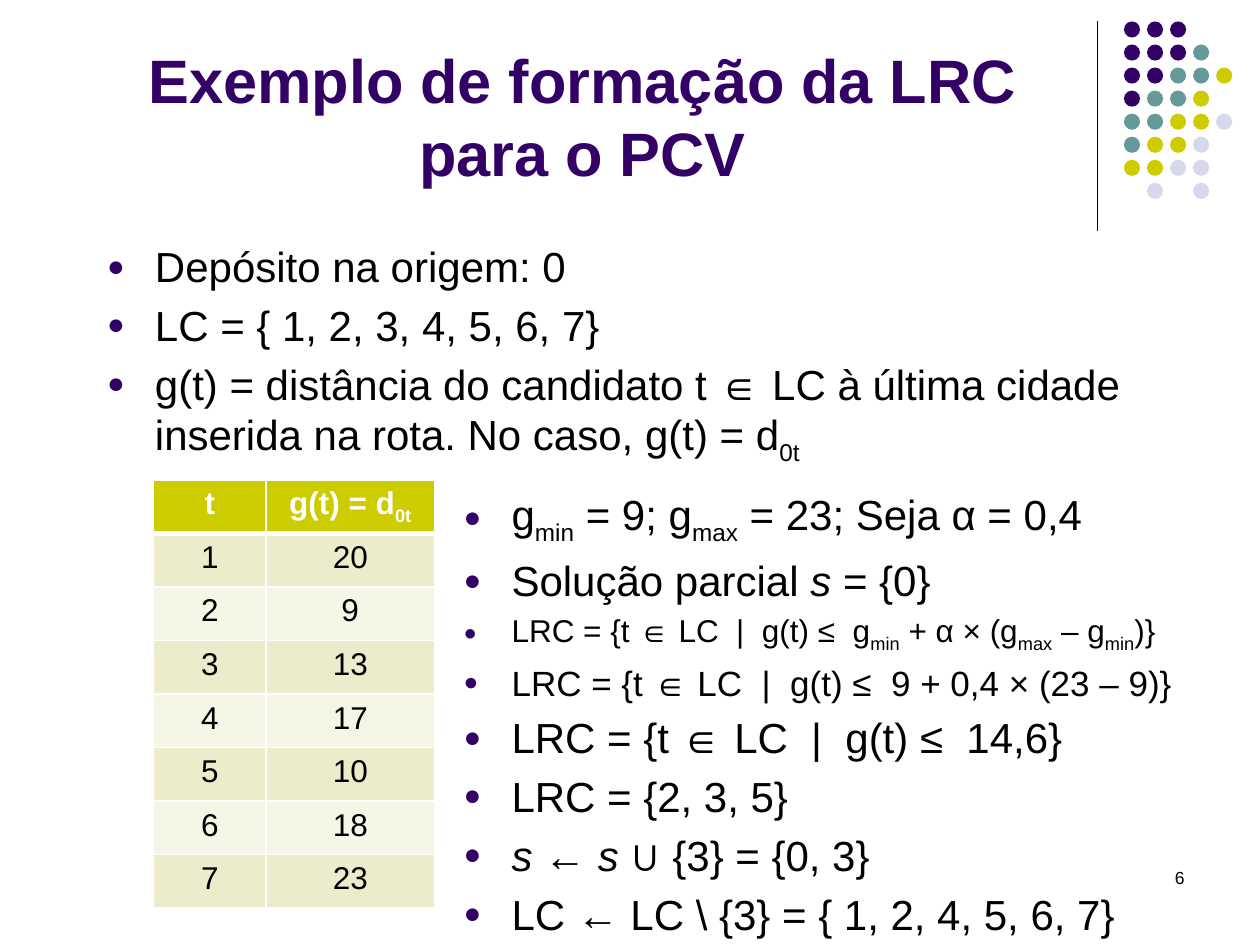
from dataclasses import dataclass

from lxml import etree
from pptx import Presentation
from pptx.dml.color import RGBColor
from pptx.enum.shapes import MSO_CONNECTOR, MSO_SHAPE
from pptx.enum.text import MSO_ANCHOR, MSO_AUTO_SIZE, PP_ALIGN
from pptx.oxml.ns import qn
from pptx.util import Inches, Pt

STRAIGHT = MSO_CONNECTOR.STRAIGHT
ELLIPSE = MSO_SHAPE.OVAL
CENTER, RIGHT, LEFT = PP_ALIGN.CENTER, PP_ALIGN.RIGHT, PP_ALIGN.LEFT
TOP, BOTTOM = MSO_ANCHOR.TOP, MSO_ANCHOR.BOTTOM
NO_FIT = MSO_AUTO_SIZE.NONE
TWO_CONTENT = 3


@dataclass(frozen=True)
class Theme:
    """Colours, font and type sizes of the deck."""
    font: str = "Arial"
    ink: str = "000000"
    paper: str = "FFFFFF"
    purple: str = "330066"
    teal: str = "669999"
    lime: str = "CCCC00"
    lilac: str = "D8D8EC"
    band_dark: str = "ECECCC"
    band_light: str = "F6F6E7"
    title: int = 35
    body: int = 24
    medium: int = 20
    small: int = 18
    number: int = 10


class SlideBuilder:
    """Draws on one slide over a grid of 100 columns by 75 rows."""

    def __init__(self, deck, theme):
        """Open a page with a title and two lists."""
        self.theme = theme
        self.column = deck.slide_width / 100
        self.row = deck.slide_height / 75
        self.page = deck.slides.add_slide(deck.slide_layouts[TWO_CONTENT])

    def area(self, left, top, width, height):
        """Turn grid units into slide lengths."""
        return (round(left * self.column), round(top * self.row),
                round(width * self.column), round(height * self.row))

    def place(self, box, area):
        """Move a box and prepare its text frame."""
        box.left, box.top, box.width, box.height = self.area(*area)
        box.text_frame.word_wrap = True
        box.text_frame.auto_size = NO_FIT
        return box.text_frame

    def add_text(self, para, text, size, color=None, bold=False, align=LEFT):
        """Set text where ~ encloses subscripts and * encloses italics."""
        para.alignment = align
        for position, piece in enumerate(text.split("~")):
            for part, words in enumerate(piece.split("*")):
                if not words:
                    continue
                span = para.add_run()
                span.text = words
                span.font.name = self.theme.font
                span.font.size = Pt(size)
                span.font.bold = bold
                span.font.italic = part % 2 == 1
                span.font.color.rgb = RGBColor.from_string(color or self.theme.ink)
                if position % 2:
                    span.font._element.set("baseline", "-25000")

    def title(self, text, area):
        """Fill the title placeholder."""
        frame = self.place(self.page.shapes.title, area)
        frame.vertical_anchor = BOTTOM
        self.add_text(frame.paragraphs[0], text, self.theme.title, self.theme.purple, True, CENTER)

    def bullet(self, para):
        """Give a paragraph a hanging round bullet."""
        properties = para._p.get_or_add_pPr()
        properties.set("marL", str(Inches(0.38)))
        properties.set("indent", str(-Inches(0.38)))
        color = etree.SubElement(properties, qn("a:buClr"))
        etree.SubElement(color, qn("a:srgbClr"), val=self.theme.purple)
        etree.SubElement(properties, qn("a:buSzPct"), val="70000")
        etree.SubElement(properties, qn("a:buFont"), typeface=self.theme.font)
        etree.SubElement(properties, qn("a:buChar"), char="●")

    def bullets(self, index, items, area):
        """Fill a body placeholder with (text, size) items."""
        frame = self.place(self.page.placeholders[index], area)
        frame.vertical_anchor = TOP
        for number, (text, size) in enumerate(items):
            para = frame.add_paragraph() if number else frame.paragraphs[0]
            self.add_text(para, text, size)
            self.bullet(para)

    def label(self, text, area):
        """Add a small right-aligned text box."""
        frame = self.place(self.page.shapes.add_textbox(*self.area(*area)), area)
        self.add_text(frame.paragraphs[0], text, self.theme.number, align=RIGHT)

    def rule(self, column, top, bottom):
        """Draw a thin vertical line."""
        left, start, _, length = self.area(column, top, 0, bottom - top)
        line = self.page.shapes.add_connector(STRAIGHT, left, start, left, start + length)
        line.line.color.rgb = RGBColor.from_string(self.theme.ink)
        line.line.width = Pt(0.75)
        etree.SubElement(line._element.spPr, qn("a:effectLst"))

    def dots(self, pattern, colors, left, top, pitch, size):
        """Draw a grouped grid of dots from rows of colour letters."""
        group = self.page.shapes.add_group_shape()
        for row, letters in enumerate(pattern):
            for column, letter in enumerate(letters):
                if letter not in colors:
                    continue
                area = self.area(left + column * pitch, top + row * pitch, size, size)
                dot = group.shapes.add_shape(ELLIPSE, *area)
                dot.shadow.inherit = False
                dot.fill.solid()
                dot.fill.fore_color.rgb = RGBColor.from_string(colors[letter])
                dot.line.fill.background()

    def borders(self, cell, top, bottom):
        """Outline a cell in the paper colour."""
        properties = cell._tc.get_or_add_tcPr()
        for side, points in (("L", 1), ("R", 1), ("T", top), ("B", bottom)):
            line = etree.SubElement(properties, qn(f"a:ln{side}"), w=str(Pt(points)))
            fill = etree.SubElement(line, qn("a:solidFill"))
            etree.SubElement(fill, qn("a:srgbClr"), val=self.theme.paper)

    def table(self, rows, widths, left, top, row_height):
        """Add a banded table whose first row is the header."""
        theme = self.theme
        area = self.area(left, top, sum(widths), row_height * len(rows))
        table = self.page.shapes.add_table(len(rows), len(widths), *area).table
        for column, width in zip(table.columns, widths):
            column.width = round(width * self.column)
        for number, values in enumerate(rows):
            header = number == 0
            band = theme.band_dark if number % 2 else theme.band_light
            for cell, value in zip(table.rows[number].cells, values):
                self.borders(cell, 3 if number == 1 else 1, 3 if header else 1)
                cell.fill.solid()
                cell.fill.fore_color.rgb = RGBColor.from_string(theme.lime if header else band)
                self.add_text(cell.text_frame.paragraphs[0], str(value), theme.small,
                              theme.paper if header else theme.ink, header, CENTER)


def main():
    """Build and save the slide."""
    theme = Theme()
    deck = Presentation()
    deck.slide_width, deck.slide_height = Inches(10), Inches(7.5)
    slide = SlideBuilder(deck, theme)

    slide.rule(87.1, 1.7, 18.3)
    slide.dots(
        ["PPP", "PPPT", "PPTTL", "PTTL", "TTLLV", "TLLV", "LLVV", " V V"],
        {"P": theme.purple, "T": theme.teal, "L": theme.lime, "V": theme.lilac},
        left=89.2, top=1.7, pitch=1.83, size=1.28)
    slide.label("6", (71.7, 68.3, 23.3, 5))
    slide.title("Exemplo de formação da LRC para o PCV", (5, 1.3, 82.5, 14.2))

    slide.bullets(1, [
        ("Depósito na origem: 0", theme.body),
        ("LC = { 1, 2, 3, 4, 5, 6, 7}", theme.body),
        ("g(t) = distância do candidato t ∈ LC à última cidade "
         "inserida na rota. No caso, g(t) = d~0t~", theme.body),
    ], (7.5, 18.6, 89, 19.5))

    distances = [20, 9, 13, 17, 10, 18, 23]
    slide.table([("t", "g(t) = d~0t~"), *enumerate(distances, 1)],
                widths=(8.9, 13.4), left=12.2, top=38.1, row_height=4.25)

    slide.bullets(2, [
        ("g~min~ = 9; g~max~ = 23; Seja α = 0,4", theme.body),
        ("Solução parcial* s* = {0}", theme.body),
        ("LRC = {t ∈ LC  |  g(t) ≤  g~min~ + α × (g~max~ – g~min~)}", theme.small),
        ("LRC = {t ∈ LC  |  g(t) ≤  9 + 0,4 × (23 – 9)}", theme.medium),
        ("LRC = {t ∈ LC  |  g(t) ≤  14,6}", theme.body),
        ("LRC = {2, 3, 5}", theme.body),
        ("*s *← *s* ∪ {3} = {0, 3}", theme.body),
        ("LC ← LC \\ {3} = { 1, 2, 4, 5, 6, 7}", theme.body),
    ], (35.8, 38.3, 59.2, 26.8))

    deck.save("out.pptx")


if __name__ == "__main__":
    main()
